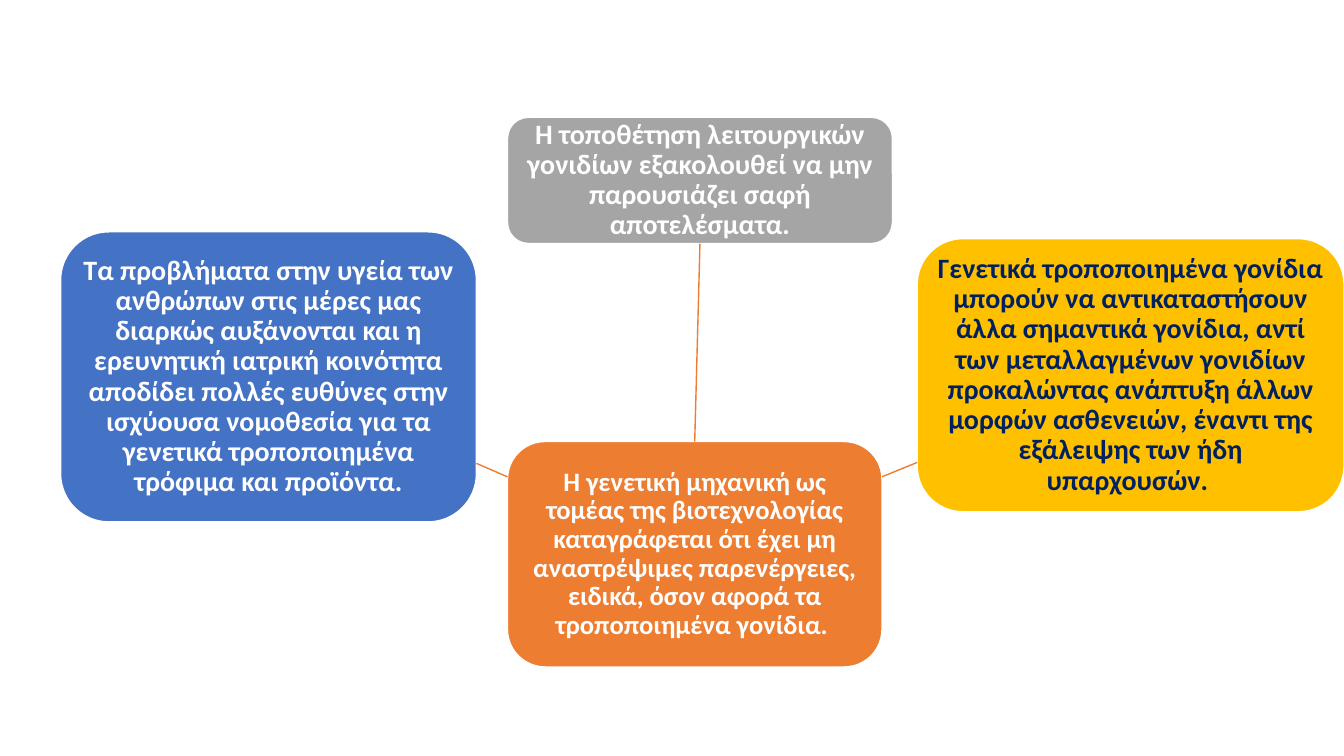
from pptx import Presentation
from pptx import util as u
from pptx.dml.color import RGBColor
from pptx.enum import shapes, text
from pptx.oxml.ns import qn
from lxml import etree

WHITE = RGBColor(0xFF, 0xFF, 0xFF)
NAVY = RGBColor(0x00, 0x20, 0x60)
ORANGE = RGBColor(0xED, 0x7D, 0x31)
GREY = RGBColor(0xA5, 0xA5, 0xA5)
GOLD = RGBColor(0xFF, 0xC0, 0x00)
BLUE = RGBColor(0x44, 0x72, 0xC4)
TOP, BOTTOM = 0, 2


def add_card(s, box, fill, words, color=WHITE, size=20, inset=4.2):
    """Rounded card with centred bold text; box is left, top, width, height."""
    sp = s.shapes.add_shape(shapes.MSO_SHAPE.ROUNDED_RECTANGLE,
                            *[u.Pt(v) for v in box])
    sp.shadow.inherit = False
    sp.fill.solid()
    sp.fill.fore_color.rgb = fill
    sp.line.color.rgb = WHITE
    sp.line.width = u.Pt(1)

    tf = sp.text_frame
    tf.word_wrap = True
    tf.vertical_anchor = text.MSO_ANCHOR.MIDDLE
    tf.margin_left = tf.margin_right = u.Pt(inset)
    tf.margin_top = tf.margin_bottom = u.Pt(inset)
    p = tf.paragraphs[0]
    p.alignment = text.PP_ALIGN.CENTER
    p.line_spacing = 0.9
    r = p.add_run()
    r.text = words
    r.font.name = "Calibri"
    r.font.size = u.Pt(size)
    r.font.bold = True
    r.font.color.rgb = color
    return sp


def add_link(s, x1, y1, x2, y2):
    """Thin orange line between two cards."""
    cx = s.shapes.add_connector(shapes.MSO_CONNECTOR.STRAIGHT,
                                u.Pt(x1), u.Pt(y1), u.Pt(x2), u.Pt(y2))
    cx.line.color.rgb = ORANGE
    cx.line.width = u.Pt(1)
    etree.SubElement(cx._element.spPr, qn("a:effectLst"))
    return cx


def main():
    prs = Presentation()
    prs.slide_width, prs.slide_height = u.Pt(960), u.Pt(540)
    s = prs.slides.add_slide(prs.slide_layouts[6])

    # Central statement
    center = add_card(
        s, (362.5, 315.4, 267.5, 161), ORANGE,
        "Η γενετική μηχανική ως τομέας της βιοτεχνολογίας καταγράφεται ότι "
        "έχει μη αναστρέψιμες παρενέργειες, ειδικά, όσον αφορά τα "
        "τροποποιημένα γονίδια. ", size=19, inset=3.8)

    # Surrounding statements
    top = add_card(
        s, (362.5, 83.8, 275, 90.2), GREY,
        "Η τοποθέτηση λειτουργικών γονιδίων εξακολουθεί να μην παρουσιάζει "
        "σαφή αποτελέσματα.")
    add_card(
        s, (655.2, 170.5, 304.8, 195), GOLD,
        "Γενετικά τροποποιημένα γονίδια μπορούν να αντικαταστήσουν άλλα "
        "σημαντικά γονίδια, αντί των μεταλλαγμένων γονιδίων προκαλώντας "
        "ανάπτυξη άλλων μορφών ασθενειών, έναντι της εξάλειψης των ήδη "
        "υπαρχουσών. ", color=NAVY)
    add_card(
        s, (43.3, 165.6, 297, 207.2), BLUE,
        "Τα προβλήματα στην υγεία των ανθρώπων στις μέρες μας διαρκώς "
        "αυξάνονται και η ερευνητική ιατρική κοινότητα αποδίδει πολλές "
        "ευθύνες στην ισχύουσα νομοθεσία για τα γενετικά τροποποιημένα "
        "τρόφιμα και προϊόντα.")

    # Links from the centre
    link = add_link(s, 497.5, 315.4, 499, 174)
    link.begin_connect(center, TOP)
    link.end_connect(top, BOTTOM)
    add_link(s, 630, 340.6, 655.2, 330.3)
    add_link(s, 362.5, 340.6, 340.3, 331)

    prs.save("out.pptx")


if __name__ == "__main__":
    main()
